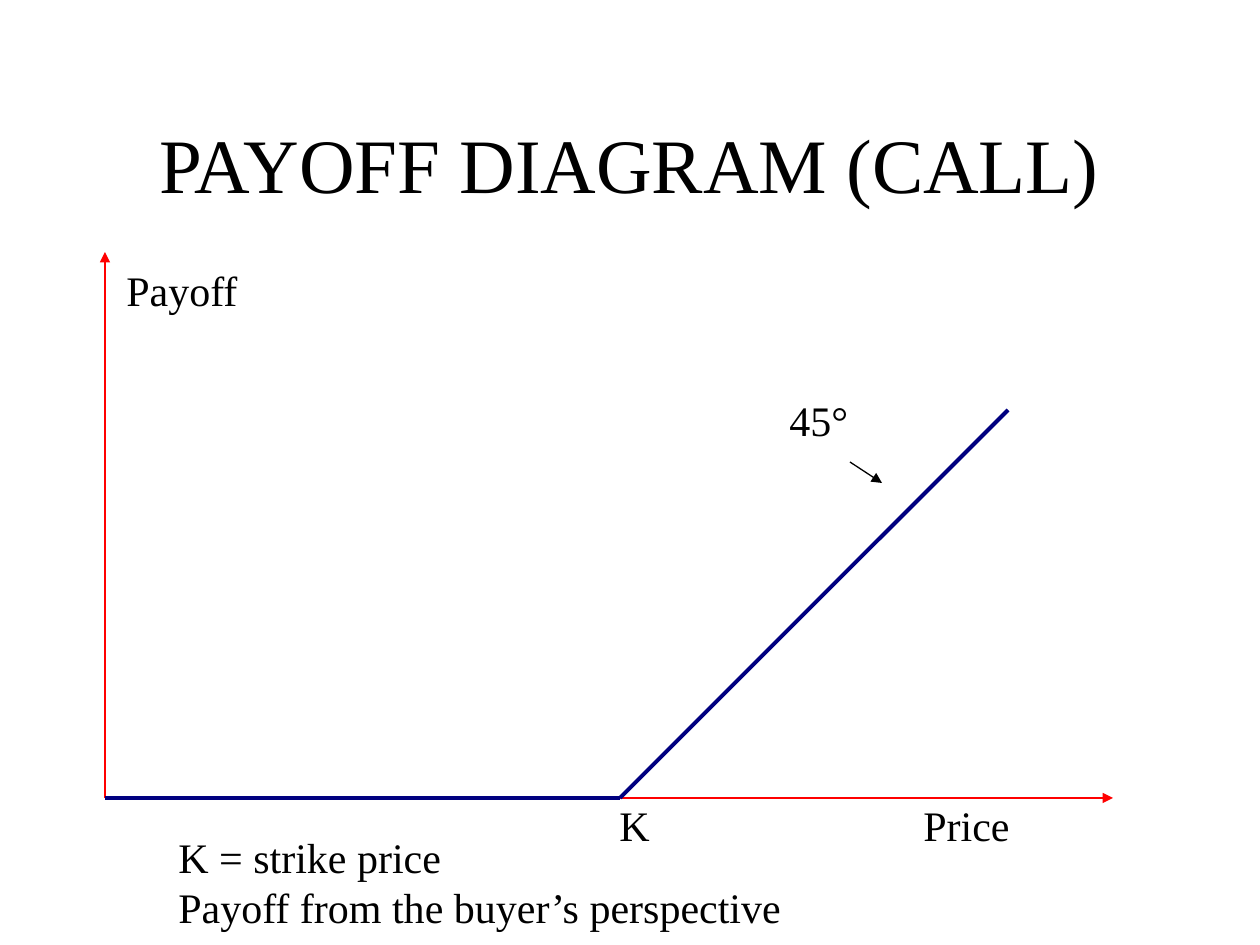
"""Build a slide with the payoff diagram of a call option."""
from lxml.etree import SubElement
from pptx import Presentation
from pptx.dml.color import RGBColor
from pptx.enum.shapes import MSO_CONNECTOR
from pptx.enum.text import MSO_ANCHOR, MSO_AUTO_SIZE, PP_ALIGN
from pptx.oxml.ns import qn
from pptx.util import Emu, Pt

SCALE = 914400 / 126


def px(*values):
    return [Emu(round(v * SCALE)) for v in values]


def style(p, size, align):
    fmt = {"name": "Times New Roman", "size": Pt(size), "bold": False}
    for key, value in fmt.items():
        setattr(p.font, key, value)
    p.font.color.rgb = RGBColor.from_string("000000")
    p.alignment = align


prs = Presentation()
prs.slide_width, prs.slide_height = px(1260, 945)
s = prs.slides.add_slide(prs.slide_layouts[5])

title = s.shapes.title
title.left, title.top, title.width, title.height = px(94, 84, 1071, 158)
title.text_frame.text = "PAYOFF DIAGRAM (CALL)"
title.text_frame.vertical_anchor = MSO_ANCHOR.MIDDLE
style(title.text_frame.paragraphs[0], 44, PP_ALIGN.CENTER)

labels = [
    ("K", 607, 793, 56, 63),
    ("Price", 911, 793, 114, 63),
    ("K = strike price\nPayoff from the buyer’s perspective", 166, 825, 630, 113),
    ("Payoff", 114, 258, 138, 63),
    ("45°", 777, 388, 86, 63),
]
for text, *box in labels:
    tf = s.shapes.add_textbox(*px(*box)).text_frame
    tf.text = text
    tf.word_wrap = False
    tf.auto_size = MSO_AUTO_SIZE.SHAPE_TO_FIT_TEXT
    for p in tf.paragraphs:
        style(p, 24, PP_ALIGN.LEFT)

left, base, strike, rise = 105, 798, 620, 388
lines = [
    (left, 252, left, base, "FF0000", 0.75, "headEnd"),
    (850, 462, 882, 483, "000000", 0.75, "tailEnd"),
    (left, base, strike, base, "000080", 2.25, None),
    (strike, base, 1113, base, "FF0000", 0.75, "tailEnd"),
    (strike, base, strike + rise, base - rise, "000080", 2.25, None),
]
for *ends, color, width, arrow in lines:
    sp = s.shapes.add_connector(MSO_CONNECTOR.STRAIGHT, *px(*ends))
    sp.line.color.rgb = RGBColor.from_string(color)
    sp.line.width = Pt(width)
    props = sp.element.spPr
    if arrow:
        SubElement(props.find(qn("a:ln")), qn(f"a:{arrow}"), type="triangle")
    SubElement(props, qn("a:effectLst"))

prs.save("out.pptx")
